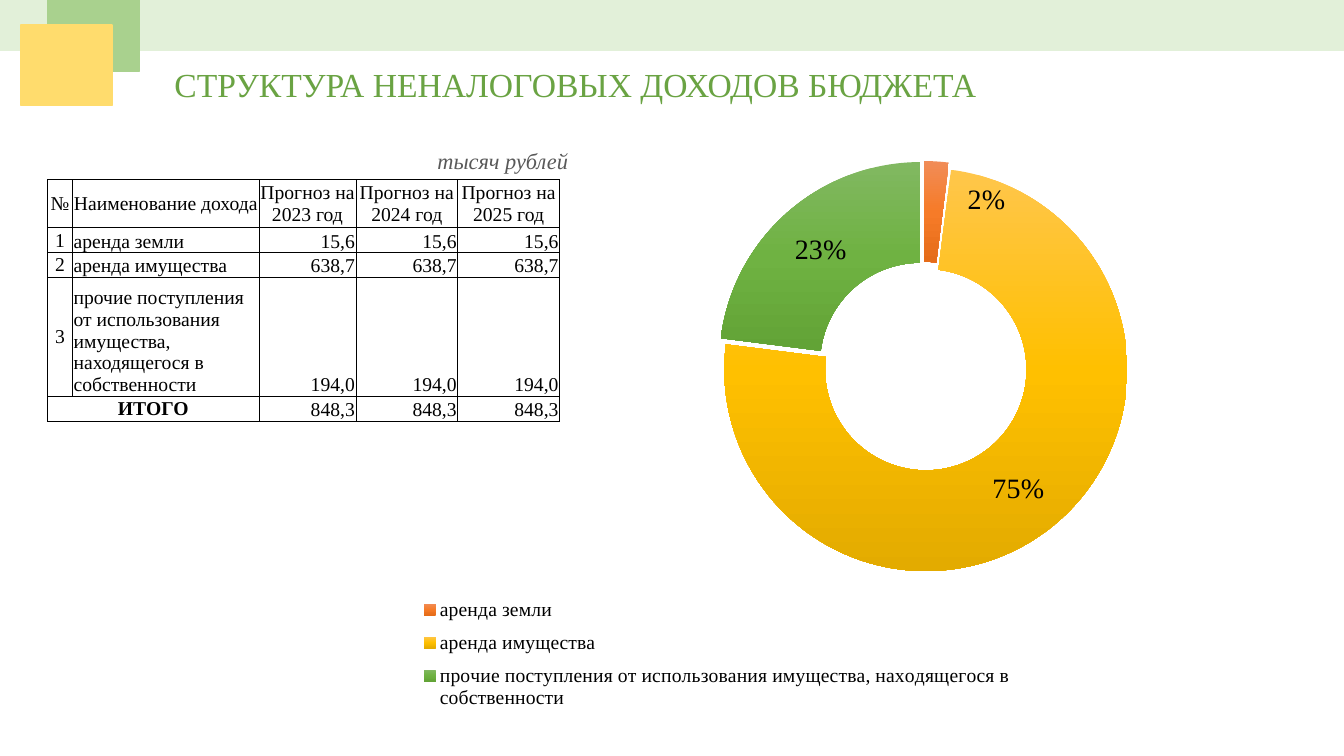
from copy import deepcopy

from pptx import Presentation
from pptx.chart.data import CategoryChartData
from pptx.dml.color import RGBColor
from pptx.enum.chart import XL_CHART_TYPE as ChartType, XL_LEGEND_POSITION as LegendPosition
from pptx.enum.shapes import MSO_SHAPE as Shape
from pptx.enum.text import MSO_ANCHOR as Anchor, MSO_AUTO_SIZE as AutoSize, PP_ALIGN as Align
from pptx.oxml import parse_xml
from pptx.oxml.ns import nsdecls
from pptx.util import Inches, Pt

COLORS = {
    "title": "6AA343", "unit": "595959", "text": "000000",
    "band": "E2F0D9", "green": "A9D18E", "yellow": "FFDC6D",
}
FONT = "Times New Roman"
TITLE = "СТРУКТУРА НЕНАЛОГОВЫХ ДОХОДОВ БЮДЖЕТА"
UNIT = "тысяч рублей"

DECORATIONS = [  # colour, left, top, width, height
    ("band", 0, 0, 13.33, 0.5),
    ("green", 0.47, 0, 0.91, 0.71),
    ("yellow", 0.21, 0.25, 0.9, 0.8),
]

INCOMES = [
    "аренда земли",
    "аренда имущества",
    "прочие поступления от использования имущества, находящегося в собственности",
]
AMOUNTS = ["15,6", "638,7", "194,0"]
TOTAL = "848,3"
YEARS = [2023, 2024, 2025]
TABLE_ROWS = [
    ["№", "Наименование дохода"] + [f"Прогноз на {year} год" for year in YEARS],
    *([str(number), income] + [amount] * len(YEARS)
      for number, (income, amount) in enumerate(zip(INCOMES, AMOUNTS), 1)),
    ["ИТОГО", ""] + [TOTAL] * len(YEARS),
]
COLUMN_WIDTHS = [0.25, 1.85, 0.96, 1.01, 1.01]
ROW_HEIGHTS = [0.48, 0.24, 0.24, 1.18, 0.25]

SHARES = [2, 75, 23]
GRADIENTS = [
    ("F18C57", "F67B28", "E56C19"),
    ("FFC64B", "FFC000", "E3AB00"),
    ("81B861", "6FB242", "62A336"),
]
EXPLOSION = 4
PLOT_LAYOUT = (0.411, 0.05, 0.462, 0.684)
LEGEND_LAYOUT = (0.06, 0.76, 0.7, 0.22)
SMALL_LABEL_SHIFT = (0.06, -0.02)


def rgb(name):
    return RGBColor.from_string(COLORS[name])


def style_font(font, size, color="text", **formats):
    font.color.rgb = rgb(color)
    for name, value in {"name": FONT, "size": Pt(size), **formats}.items():
        setattr(font, name, value)


def place(shape, left, top, width, height):
    for name, value in zip(("left", "top", "width", "height"), (left, top, width, height)):
        setattr(shape, name, Inches(value))


def write_line(shape, text, size, color, **formats):
    """Fill a shape with one left-aligned line that does not wrap."""
    frame = shape.text_frame
    frame.text = text
    frame.word_wrap = False
    frame.auto_size = AutoSize.SHAPE_TO_FIT_TEXT
    frame.vertical_anchor = Anchor.TOP
    frame.paragraphs[0].alignment = Align.LEFT
    style_font(frame.paragraphs[0].runs[0].font, size, color, **formats)


def add_borders(cell):
    properties = cell._tc.get_or_add_tcPr()
    for index, side in enumerate("LRTB"):
        properties.insert(index, parse_xml(
            f'<a:ln{side} {nsdecls("a")} w="{Pt(0.5)}"><a:solidFill>'
            f'<a:srgbClr val="{COLORS["text"]}"/></a:solidFill></a:ln{side}>'))


def add_income_table(slide):
    table = slide.shapes.add_table(
        len(TABLE_ROWS), len(COLUMN_WIDTHS), Inches(0.47), Inches(1.78),
        Inches(sum(COLUMN_WIDTHS)), Inches(sum(ROW_HEIGHTS))).table
    table.first_row = table.horz_banding = False
    for column, width in zip(table.columns, COLUMN_WIDTHS):
        column.width = Inches(width)
    for row, height in zip(table.rows, ROW_HEIGHTS):
        row.height = Inches(height)

    last = len(TABLE_ROWS) - 1
    table.cell(last, 0).merge(table.cell(last, 1))
    for r, values in enumerate(TABLE_ROWS):
        for c, value in enumerate(values):
            cell = table.cell(r, c)
            cell.fill.background()
            add_borders(cell)
            cell.margin_left = cell.margin_right = cell.margin_top = Inches(0.01)
            cell.margin_bottom = 0
            centred = r == 0 or c == 0
            cell.vertical_anchor = Anchor.MIDDLE if centred else Anchor.BOTTOM
            paragraph = cell.text_frame.paragraphs[0]
            paragraph.alignment = (
                Align.CENTER if centred else Align.LEFT if c == 1 else Align.RIGHT)
            if value:
                run = paragraph.add_run()
                run.text = value
                style_font(run.font, 14, bold=r == last and c == 0)


def manual_layout(left, top, width, height, inner=False):
    target = '<c:layoutTarget val="inner"/>' if inner else ""
    return parse_xml(
        f'<c:layout {nsdecls("c")}><c:manualLayout>{target}'
        f'<c:xMode val="edge"/><c:yMode val="edge"/><c:x val="{left}"/><c:y val="{top}"/>'
        f'<c:w val="{width}"/><c:h val="{height}"/></c:manualLayout></c:layout>')


def replace_layout(parent, layout, index):
    for old in parent.xpath("./c:layout"):
        parent.remove(old)
    parent.insert(index, layout)


def shift_first_label(labels_xml):
    """Move the label of the narrow slice beside its ring."""
    x, y = SMALL_LABEL_SHIFT
    flags = "".join(
        f'<c:show{name} val="{int(name == "Percent")}"/>'
        for name in ("LegendKey", "Val", "CatName", "SerName", "Percent", "BubbleSize"))
    label = parse_xml(
        f'<c:dLbl {nsdecls("c")}><c:idx val="0"/><c:layout><c:manualLayout>'
        f'<c:x val="{x}"/><c:y val="{y}"/></c:manualLayout></c:layout>{flags}</c:dLbl>')
    label.insert(2, deepcopy(labels_xml.xpath("./c:txPr")[0]))
    labels_xml.insert(0, label)


def add_share_chart(slide):
    data = CategoryChartData()
    data.categories = INCOMES
    data.add_series("Series 1", SHARES)
    chart = slide.shapes.add_chart(
        ChartType.DOUGHNUT, Inches(3.49), Inches(1.3), Inches(8.83), Inches(5.96), data).chart
    chart.has_title = False
    chart.font.name, chart.font.size = "Calibri", Pt(10)
    chart.has_legend = True
    chart.legend.position = LegendPosition.BOTTOM
    chart.legend.include_in_layout = False
    style_font(chart.legend.font, 14)
    replace_layout(chart.legend._element, manual_layout(*LEGEND_LAYOUT), 1)

    plot = chart.plots[0]
    plot.vary_by_categories = True
    chart_xml = chart._chartSpace
    replace_layout(chart_xml.xpath(".//c:plotArea")[0],
                   manual_layout(*PLOT_LAYOUT, inner=True), 0)
    chart_xml.xpath(".//c:holeSize")[0].set("val", "75")

    series = plot.series[0]
    series._element.xpath("./c:tx")[0].addnext(
        parse_xml(f'<c:explosion {nsdecls("c")} val="{EXPLOSION}"/>'))
    for index, stops in enumerate(GRADIENTS):
        point_format = series.points[index].format
        point_format.line.fill.background()
        point_format.fill.gradient()
        point_format.fill.gradient_angle = 270
        stop_list = chart_xml.xpath(".//c:dPt//a:gsLst")[index]
        for old in list(stop_list):
            stop_list.remove(old)
        for step, color in enumerate(stops):
            stop_list.append(parse_xml(
                f'<a:gs {nsdecls("a")} pos="{step * 50000}"><a:srgbClr val="{color}"/></a:gs>'))

    labels = series.data_labels
    labels.show_percentage = True
    labels.show_value = False
    style_font(labels.font, 20)
    shift_first_label(labels._element)


def main():
    presentation = Presentation()
    presentation.slide_width, presentation.slide_height = Inches(13.33), Inches(7.5)
    slide = presentation.slides.add_slide(presentation.slide_layouts[5])
    title = slide.shapes.title
    place(title, 1.63, 0.58, 8.24, 0.5)
    write_line(title, TITLE, 24, "title")
    for color, *box in DECORATIONS:
        shape = slide.shapes.add_shape(Shape.RECTANGLE, *map(Inches, box))
        shape.shadow.inherit = False
        shape.fill.solid()
        shape.fill.fore_color.rgb = shape.line.color.rgb = rgb(color)
        shape.line.width = Pt(1)
    add_income_table(slide)
    unit = slide.shapes.add_textbox(*map(Inches, (4.24, 1.41, 1.52, 0.37)))
    write_line(unit, UNIT, 16, "unit", italic=True)
    add_share_chart(slide)
    presentation.save("out.pptx")


if __name__ == "__main__":
    main()
